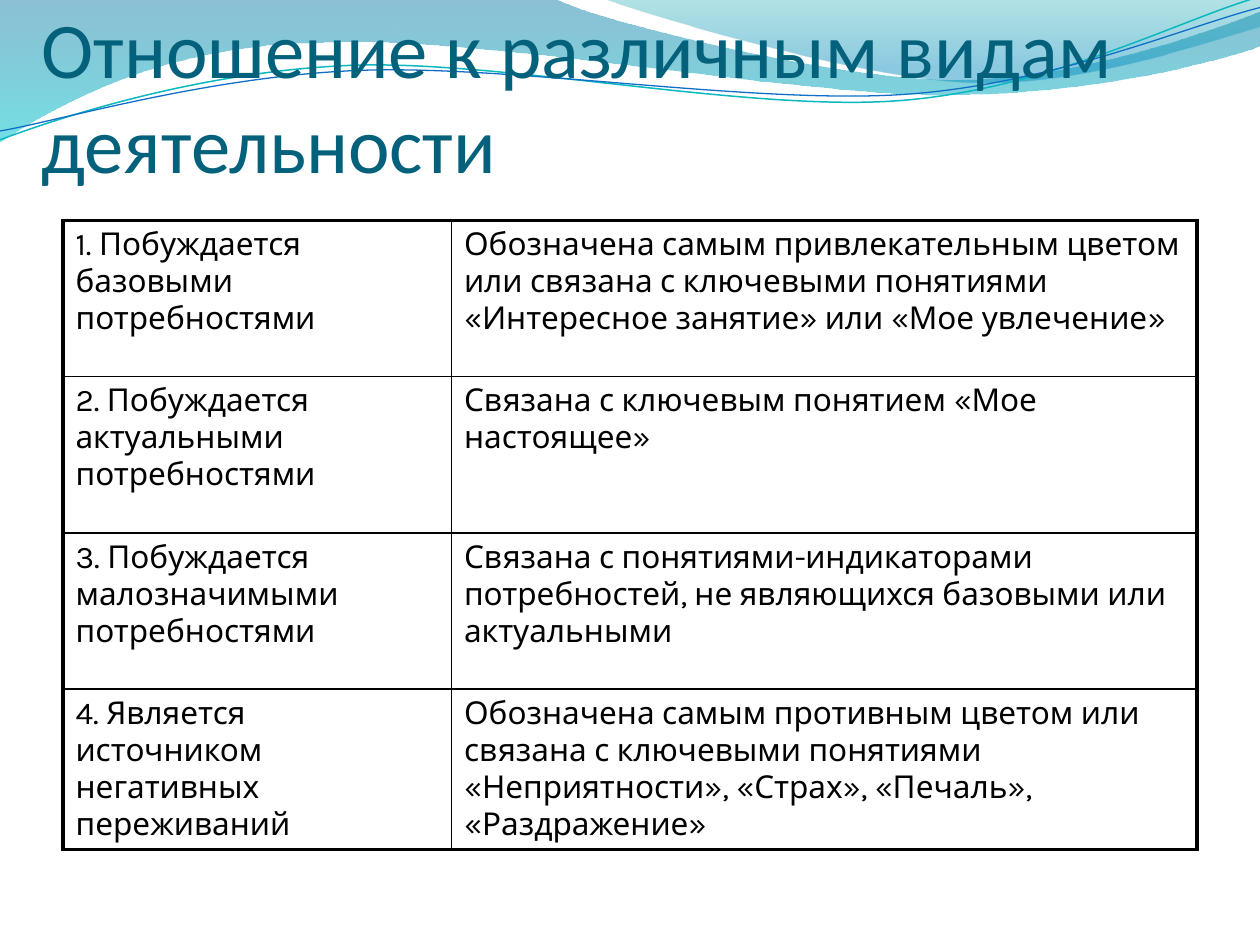
from dataclasses import dataclass

from lxml.etree import SubElement
from pptx import Presentation
from pptx.dml.color import RGBColor
from pptx.enum.text import MSO_ANCHOR as Anchor, MSO_AUTO_SIZE as AutoSize, PP_ALIGN as Align
from pptx.oxml.ns import qn
from pptx.util import Inches, Pt


@dataclass(frozen=True)
class Theme:
    title_font: str = "Calibri"
    body_font: str = "Karla"
    title_size: float = 45
    body_size: float = 18
    title_color: str = "04617B"
    text_color: str = "000000"
    border_color: str = "000000"
    outer_border: float = 2.25
    inner_border: float = 1


@dataclass(frozen=True)
class Stop:
    position: float
    color: str
    opacity: int


@dataclass(frozen=True)
class Wave:
    start: tuple
    segments: tuple
    stops: tuple = ()
    line_color: str = ""
    line_width: float = 0


THEME = Theme()

# A segment of two numbers is a straight line, one of six a Bezier curve.
WAVES = (
    Wave((0, -0.01), (
        (4.4, -0.01),
        (4.76, 0.17, 6.64, 0.63, 7.58, 0.63),
        (8.53, 0.63, 9.58, 0.26, 10, 0.09),
        (10.01, 0.36),
        (9.83, 0.44, 8.7, 0.76, 7.46, 0.75),
        (6.22, 0.75, 3.82, 0.28, 2.57, 0.34),
        (1.29, 0.35, 0.46, 0.83, -0.01, 1.13),
        (0, -0.01),
    ), stops=(Stop(0, "0074A1", 45), Stop(1, "00C6CF", 55))),
    Wave((4.79, -0.01), (
        (5.09, 0.11, 6.82, 0.62, 7.69, 0.65),
        (8.56, 0.69, 9.61, 0.32, 10, 0.21),
        (10, 0),
        (4.79, -0.01),
    ), stops=(Stop(0, "00A1A9", 30), Stop(0.8, "008BBF", 45))),
    Wave((0, 1.11), (
        (0.48, 0.93, 1.58, 0.57, 2.77, 0.52),
        (3.95, 0.47, 5.93, 0.89, 7.13, 0.8),
        (8.33, 0.71, 9.38, 0.15, 9.98, -0.02),
    ), line_color="0AB8BF", line_width=0.85),
    Wave((0, 1.04), (
        (0.47, 0.96, 1.64, 0.61, 2.83, 0.56),
        (4.03, 0.51, 5.97, 0.83, 7.17, 0.75),
        (8.36, 0.67, 9.41, 0.21, 10, 0.06),
    ), line_color="0F6FC6", line_width=0.75),
)

TITLE = "Отношение к различным видам деятельности"
ROWS = (
    ("1. Побуждается базовыми потребностями",
     "Обозначена самым привлекательным цветом или связана с ключевыми понятиями "
     "«Интересное занятие» или «Мое увлечение»"),
    ("2. Побуждается актуальными потребностями",
     "Связана с ключевым понятием «Мое настоящее»"),
    ("3. Побуждается малозначимыми потребностями",
     "Связана с понятиями-индикаторами потребностей, не являющихся базовыми или актуальными"),
    ("4. Является источником негативных переживаний",
     "Обозначена самым противным цветом или связана с ключевыми понятиями "
     "«Неприятности», «Страх», «Печаль», «Раздражение»"),
)
COLUMN_WIDTHS = (37 / 12, 71 / 12)
ROW_HEIGHT = 1.24


def write_text(text_frame, text: str, *, font: str, size: float, color: str) -> None:
    text_frame.word_wrap = True
    paragraph = text_frame.paragraphs[0]
    paragraph.alignment = Align.LEFT
    run = paragraph.add_run()
    run.text = text
    run.font.name = font
    run.font.size = Pt(size)
    run.font.color.rgb = RGBColor.from_string(color)


def bend_segments(shape, segments: tuple) -> None:
    lines = list(shape.element.iter(qn("a:lnTo")))
    for line, segment in zip(lines, segments):
        if len(segment) == 2:
            continue
        line.tag = qn("a:cubicBezTo")
        for point in list(line):
            line.remove(point)
        for x, y in zip(segment[::2], segment[1::2]):
            SubElement(line, qn("a:pt"), x=str(Inches(x) - shape.left),
                       y=str(Inches(y) - shape.top))


def draw_wave(slide, wave: Wave) -> None:
    builder = slide.shapes.build_freeform(*map(Inches, wave.start))
    ends = [tuple(map(Inches, segment[-2:])) for segment in wave.segments]
    builder.add_line_segments(ends, close=bool(wave.stops))
    shape = builder.convert_to_shape()
    bend_segments(shape, wave.segments)
    shape.shadow.inherit = False
    if not wave.stops:
        shape.fill.background()
        shape.line.color.rgb = RGBColor.from_string(wave.line_color)
        shape.line.width = Pt(wave.line_width)
        return
    shape.line.fill.background()
    shape.fill.gradient()
    shape.fill.gradient_angle = 270
    for gradient_stop, stop in zip(shape.fill.gradient_stops, wave.stops):
        gradient_stop.position = stop.position
        gradient_stop.color.rgb = RGBColor.from_string(stop.color)
    colors = shape.element.spPr.iterfind(f"{qn('a:gradFill')}//{qn('a:srgbClr')}")
    for color, stop in zip(colors, wave.stops):
        SubElement(color, qn("a:alpha"), val=str(stop.opacity * 1000))


def set_border(cell, side: str, width: float) -> None:
    properties = cell._tc.get_or_add_tcPr()
    line = SubElement(properties, qn(f"a:ln{side}"), w=str(Pt(width)))
    fill = SubElement(line, qn("a:solidFill"))
    SubElement(fill, qn("a:srgbClr"), val=THEME.border_color)


def draw_title(slide) -> None:
    title = slide.shapes.title
    title.left, title.top = Inches(0.33), Inches(0.25)
    title.width, title.height = Inches(9.34), Inches(1.25)
    frame = title.text_frame
    frame.auto_size = AutoSize.NONE
    frame.vertical_anchor = Anchor.BOTTOM
    frame.margin_left = frame.margin_right = frame.margin_bottom = 0
    frame.margin_top = Inches(0.05)
    write_text(frame, TITLE, font=THEME.title_font, size=THEME.title_size,
               color=THEME.title_color)
    title.element.getparent().append(title.element)


def draw_table(slide) -> None:
    last_row, last_column = len(ROWS) - 1, len(COLUMN_WIDTHS) - 1
    table = slide.shapes.add_table(
        len(ROWS), len(COLUMN_WIDTHS), Inches(0.5), Inches(1.75),
        Inches(sum(COLUMN_WIDTHS)), Inches(ROW_HEIGHT * len(ROWS)),
    ).table
    table.first_row = table.horz_banding = False
    for column, width in zip(table.columns, COLUMN_WIDTHS):
        column.width = Inches(width)
    for row_index, texts in enumerate(ROWS):
        table.rows[row_index].height = Inches(ROW_HEIGHT)
        for column_index, text in enumerate(texts):
            cell = table.cell(row_index, column_index)
            write_text(cell.text_frame, text, font=THEME.body_font,
                       size=THEME.body_size, color=THEME.text_color)
            outer_sides = {"L": column_index == 0, "R": column_index == last_column,
                           "T": row_index == 0, "B": row_index == last_row}
            for side, is_outer in outer_sides.items():
                set_border(cell, side, THEME.outer_border if is_outer else THEME.inner_border)
            cell.fill.background()


def main() -> None:
    presentation = Presentation()
    presentation.slide_width, presentation.slide_height = Inches(10), Inches(7.5)
    slide = presentation.slides.add_slide(presentation.slide_layouts.get_by_name("Title Only"))
    for wave in WAVES:
        draw_wave(slide, wave)
    draw_title(slide)
    draw_table(slide)
    presentation.save("out.pptx")


if __name__ == "__main__":
    main()
